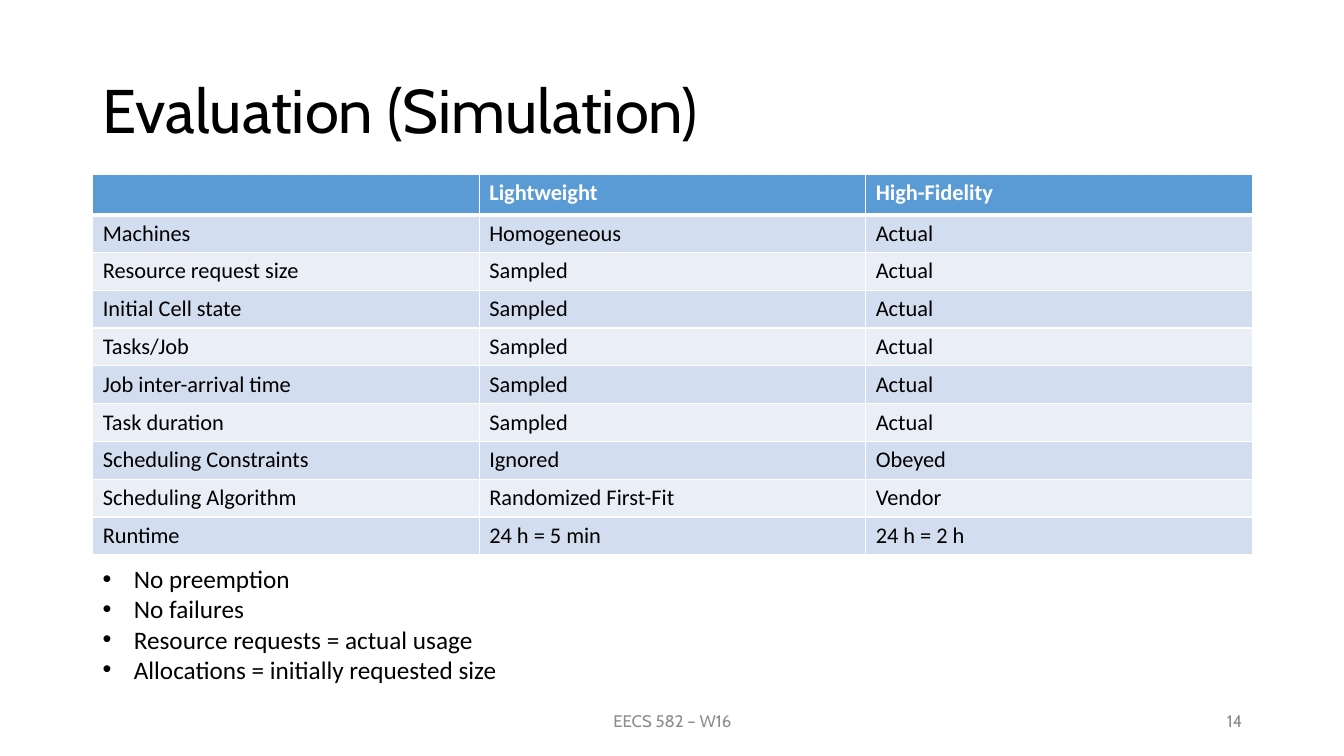
from lxml import etree
from pptx import Presentation
from pptx.dml.color import RGBColor
from pptx.enum.text import MSO_ANCHOR, PP_ALIGN
from pptx.oxml.ns import qn
from pptx.util import Inches, Pt

LEFT, CENTER, RIGHT = PP_ALIGN.LEFT, PP_ALIGN.CENTER, PP_ALIGN.RIGHT
TOP, MIDDLE = MSO_ANCHOR.TOP, MSO_ANCHOR.MIDDLE

COLORS = {
    "text": "000000",
    "white": "FFFFFF",
    "header": "5B9BD5",
    "odd": "D2DEEF",
    "even": "EAEFF7",
    "footer": "8C8C8C",
}
HEADING_FONT, BODY_FONT = "Cabin", "Calibri"

COMPARISON = [
    ("", "Lightweight", "High-Fidelity"),
    ("Machines", "Homogeneous", "Actual"),
    ("Resource request size", "Sampled", "Actual"),
    ("Initial Cell state", "Sampled", "Actual"),
    ("Tasks/Job", "Sampled", "Actual"),
    ("Job inter-arrival time", "Sampled", "Actual"),
    ("Task duration", "Sampled", "Actual"),
    ("Scheduling Constraints", "Ignored", "Obeyed"),
    ("Scheduling Algorithm", "Randomized First-Fit", "Vendor"),
    ("Runtime", "24 h = 5 min", "24 h = 2 h"),
]
ASSUMPTIONS = [
    "No preemption",
    "No failures",
    "Resource requests = actual usage",
    "Allocations = initially requested size",
]


def add_run(p, text, size, font, color, bold=False):
    r = p.add_run()
    r.text = text
    r.font.size = Pt(size)
    r.font.name = font
    r.font.bold = bold
    r.font.color.rgb = RGBColor.from_string(COLORS[color])


def add_bullet(p):
    pPr = p._p.get_or_add_pPr()
    pPr.set("marL", str(Inches(0.31)))
    pPr.set("indent", str(-Inches(0.31)))
    etree.SubElement(pPr, qn("a:buFont")).set("typeface", "Arial")
    etree.SubElement(pPr, qn("a:buChar")).set("char", "•")


def add_text(s, box, lines, size, font, color, align=LEFT, anchor=MIDDLE,
             spacing=None, bullets=False, wrap=True):
    tf = s.shapes.add_textbox(*map(Inches, box)).text_frame
    tf.word_wrap = wrap
    tf.vertical_anchor = anchor
    for i, line in enumerate(lines):
        p = tf.add_paragraph() if i else tf.paragraphs[0]
        p.alignment = align
        if spacing:
            p.line_spacing = spacing
        if bullets:
            add_bullet(p)
        add_run(p, line, size, font, color)


def add_borders(cell, top, bottom):
    tcPr = cell._tc.get_or_add_tcPr()
    for side, width in (("L", 1), ("R", 1), ("T", top), ("B", bottom)):
        ln = etree.SubElement(tcPr, qn(f"a:ln{side}"), w=str(Pt(width)))
        fill = etree.SubElement(ln, qn("a:solidFill"))
        etree.SubElement(fill, qn("a:srgbClr"), val=COLORS["white"])


def add_comparison(s, box, rows):
    left, top, width, height = map(Inches, box)
    table = s.shapes.add_table(len(rows), len(rows[0]), left, top, width, height).table
    for i, row in enumerate(rows):
        header = i == 0
        fill = "header" if header else "odd" if i % 2 else "even"
        for j, text in enumerate(row):
            cell = table.cell(i, j)
            # A thicker rule separates the header from the body
            add_borders(cell, 3 if i == 1 else 1, 3 if header else 1)
            cell.fill.solid()
            cell.fill.fore_color.rgb = RGBColor.from_string(COLORS[fill])
            add_run(cell.text_frame.paragraphs[0], text, 16, BODY_FONT,
                    "white" if header else "text", header)


def main():
    prs = Presentation()
    prs.slide_width, prs.slide_height = Inches(13.33), Inches(7.5)
    s = prs.slides.add_slide(prs.slide_layouts[6])

    # Title
    add_text(s, (0.92, 0.4, 11.5, 1.45), ["Evaluation (Simulation)"], 44,
             HEADING_FONT, "text", spacing=0.9)

    # Simulator comparison
    add_comparison(s, (0.92, 1.73, 11.5, 3.75), COMPARISON)

    # Footer and slide number
    add_text(s, (4.42, 6.95, 4.5, 0.4), ["EECS 582 – W16"], 12,
             HEADING_FONT, "footer", CENTER)
    add_text(s, (9.42, 6.95, 3, 0.4), ["14"], 12, HEADING_FONT, "footer", RIGHT)

    # Shared assumptions
    add_text(s, (0.92, 5.54, 4.16, 1.62), ASSUMPTIONS, 18, BODY_FONT, "text",
             anchor=TOP, bullets=True, wrap=False)

    prs.save("out.pptx")


if __name__ == "__main__":
    main()
